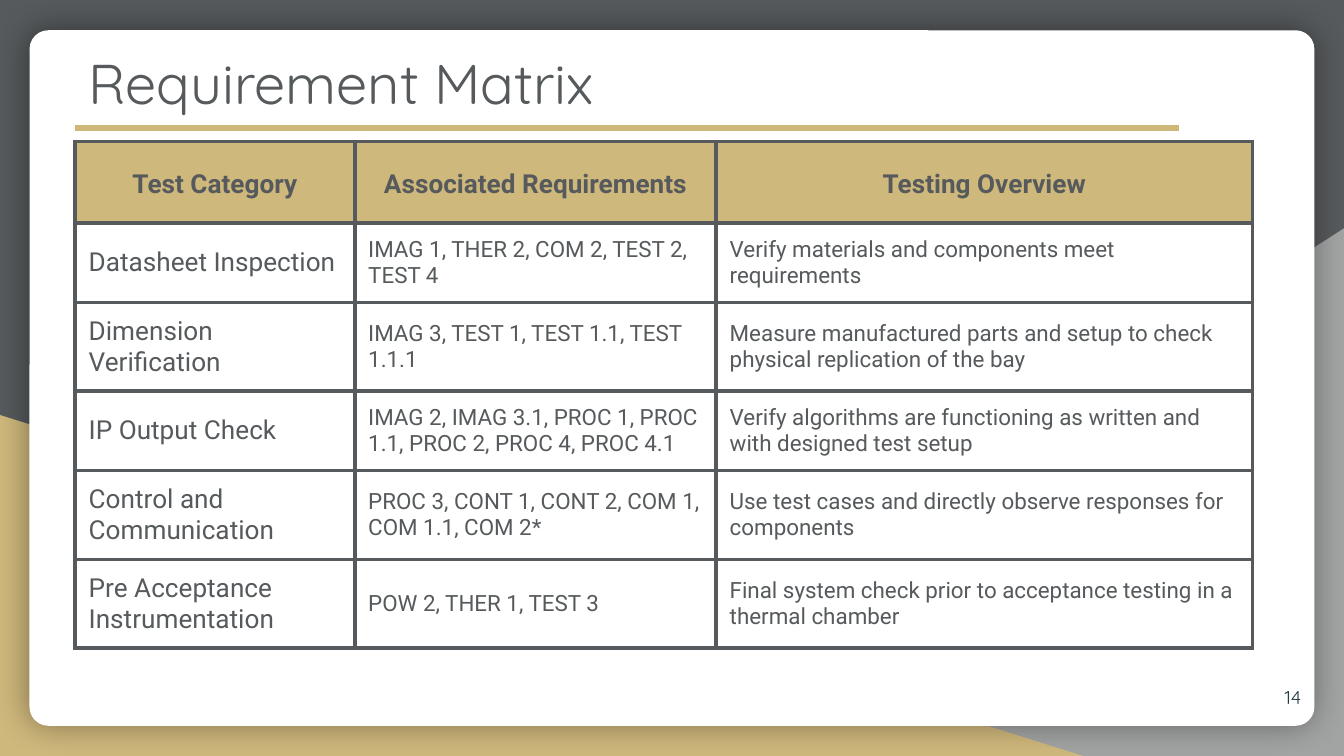
from lxml.etree import SubElement
from pptx import Presentation
from pptx.dml.color import RGBColor
from pptx.enum.shapes import MSO_CONNECTOR, MSO_SHAPE
from pptx.enum.text import MSO_ANCHOR, PP_ALIGN
from pptx.oxml import parse_xml
from pptx.oxml.ns import nsdecls, qn
from pptx.util import Inches, Pt

WIDTH = Inches(10)
HEIGHT = WIDTH * 9 // 16
INSET = Inches(0.1)
SLATE = RGBColor(0x56, 0x5A, 0x5C)
GOLD = RGBColor(0xCF, 0xB8, 0x7C)
GRAY = RGBColor(0xA2, 0xA4, 0xA3)
WHITE = RGBColor(0xFF, 0xFF, 0xFF)
NAVY = RGBColor(0x23, 0x3A, 0x44)

LEFT = 5.6
CONTENT_WIDTH = 82.1
COLUMN_SHARES = [20.8, 26.9, 39.9]
HEADER_SHARE = 10.8
ROW_SHARE = 10.3
HEADINGS = ["Test Category", "Associated Requirements", "Testing Overview"]
TESTS = [
    ("Datasheet Inspection", "IMAG 1, THER 2, COM 2, TEST 2, TEST 4",
     "Verify materials and components meet requirements"),
    ("Dimension Verification", "IMAG 3, TEST 1, TEST 1.1, TEST 1.1.1",
     "Measure manufactured parts and setup to check physical replication of the bay"),
    ("IP Output Check", "IMAG 2, IMAG 3.1, PROC 1, PROC 1.1, PROC 2, PROC 4, PROC 4.1",
     "Verify algorithms are functioning as written and with designed test setup"),
    ("Control and Communication", "PROC 3, CONT 1, CONT 2, COM 1, COM 1.1, COM 2*",
     "Use test cases and directly observe responses for components"),
    ("Pre Acceptance Instrumentation", "POW 2, THER 1, TEST 3",
     "Final system check prior to acceptance testing in a thermal chamber"),
]


def across(percent):
    return round(WIDTH * percent / 100)


def down(percent):
    return round(HEIGHT * percent / 100)


def area(left, top, width, height):
    return across(left), down(top), across(width), down(height)


def write(frame, text, size, font="Roboto", color=SLATE, bold=False,
          align=PP_ALIGN.LEFT, before=0, after=0, spacing=1.0):
    paragraph = frame.paragraphs[0]
    paragraph.alignment = align
    paragraph.space_before = Pt(before)
    paragraph.space_after = Pt(after)
    paragraph.line_spacing = spacing
    run = paragraph.add_run()
    run.text = text
    run.font.name = font
    run.font.size = Pt(size)
    run.font.bold = bold
    run.font.color.rgb = color


def add_panel(slide, kind, place, color):
    shape = slide.shapes.add_shape(kind, *area(*place))
    shape.shadow.inherit = False
    shape.fill.solid()
    shape.fill.fore_color.rgb = color
    shape.line.fill.background()
    return shape


def add_glow(shape):
    effects = shape.element.spPr.find(qn("a:effectLst"))
    effects.append(parse_xml(
        f'<a:outerShdw {nsdecls("a")} blurRad="{Pt(18)}" dist="0" dir="0" '
        'algn="ctr" rotWithShape="0"><a:srgbClr val="000000">'
        '<a:alpha val="40000"/></a:srgbClr></a:outerShdw>'))


def add_rule(slide, left, top, width):
    rule = slide.shapes.add_connector(
        MSO_CONNECTOR.STRAIGHT, across(left), down(top), across(left + width), down(top))
    rule.line.color.rgb = GOLD
    rule.line.width = Pt(3)
    SubElement(rule.element.spPr, qn("a:effectLst"))


def add_label(slide, place, text, anchor=MSO_ANCHOR.TOP, **style):
    frame = slide.shapes.add_textbox(*area(*place)).text_frame
    frame.word_wrap = True
    frame.vertical_anchor = anchor
    frame.margin_left = frame.margin_right = INSET
    frame.margin_top = frame.margin_bottom = INSET
    write(frame, text, **style)


def add_borders(cell):
    properties = cell._tc.get_or_add_tcPr()
    for side in ("lnL", "lnR", "lnT", "lnB"):
        properties.append(parse_xml(
            f'<a:{side} {nsdecls("a")} w="{Pt(2.25)}"><a:solidFill>'
            f'<a:srgbClr val="{SLATE}"/></a:solidFill></a:{side}>'))


def fill_cell(cell, text, header, **style):
    cell.margin_left = cell.margin_right = INSET
    cell.margin_top = cell.margin_bottom = INSET
    cell.vertical_anchor = MSO_ANCHOR.MIDDLE
    add_borders(cell)
    if header:
        cell.fill.solid()
        cell.fill.fore_color.rgb = GOLD
    else:
        cell.fill.background()
    write(cell.text_frame, text, before=1, after=5, **style)


def add_matrix(slide, left, top):
    rows = [HEADINGS, *TESTS]
    row_shares = [HEADER_SHARE] + [ROW_SHARE] * len(TESTS)
    place = area(left, top, sum(COLUMN_SHARES), sum(row_shares))
    table = slide.shapes.add_table(len(rows), len(HEADINGS), *place).table
    table.first_row = table.horz_banding = False
    for column, share in zip(table.columns, COLUMN_SHARES):
        column.width = across(share)
    for row, share in zip(table.rows, row_shares):
        row.height = down(share)
    for row_index, texts in enumerate(rows):
        for column_index, text in enumerate(texts):
            cell = table.cell(row_index, column_index)
            if row_index == 0:
                fill_cell(cell, text, True, size=14, bold=True,
                          align=PP_ALIGN.CENTER, spacing=1.14)
            else:
                fill_cell(cell, text, False, size=14 if column_index == 0 else 12)


def add_backdrop(slide):
    slide.background.fill.solid()
    slide.background.fill.fore_color.rgb = SLATE
    corner = add_panel(slide, MSO_SHAPE.RIGHT_TRIANGLE, (39.2, 30.2, 60.8, 69.8), GRAY)
    corner.element.spPr.xfrm.set("flipH", "1")
    add_panel(slide, MSO_SHAPE.RIGHT_TRIANGLE, (0, 54.9, 80.6, 45.1), GOLD)
    card = add_panel(slide, MSO_SHAPE.ROUNDED_RECTANGLE, (2.2, 4, 95.6, 92), WHITE)
    card.adjustments[0] = 0.027
    add_glow(card)


def main():
    presentation = Presentation()
    presentation.slide_width = WIDTH
    presentation.slide_height = HEIGHT
    slide = presentation.slides.add_slide(presentation.slide_layouts[6])
    add_backdrop(slide)
    add_rule(slide, LEFT, 16.9, CONTENT_WIDTH)
    add_matrix(slide, LEFT, 18.7)
    add_label(slide, (LEFT, 4.6, CONTENT_WIDTH, 12.3), "Requirement Matrix",
              size=30, font="Quicksand")
    add_label(slide, (91.8, 88.4, 6, 7.6), "14", anchor=MSO_ANCHOR.MIDDLE,
              size=10, font="Quicksand", color=NAVY, align=PP_ALIGN.RIGHT)
    presentation.save("out.pptx")


if __name__ == "__main__":
    main()
